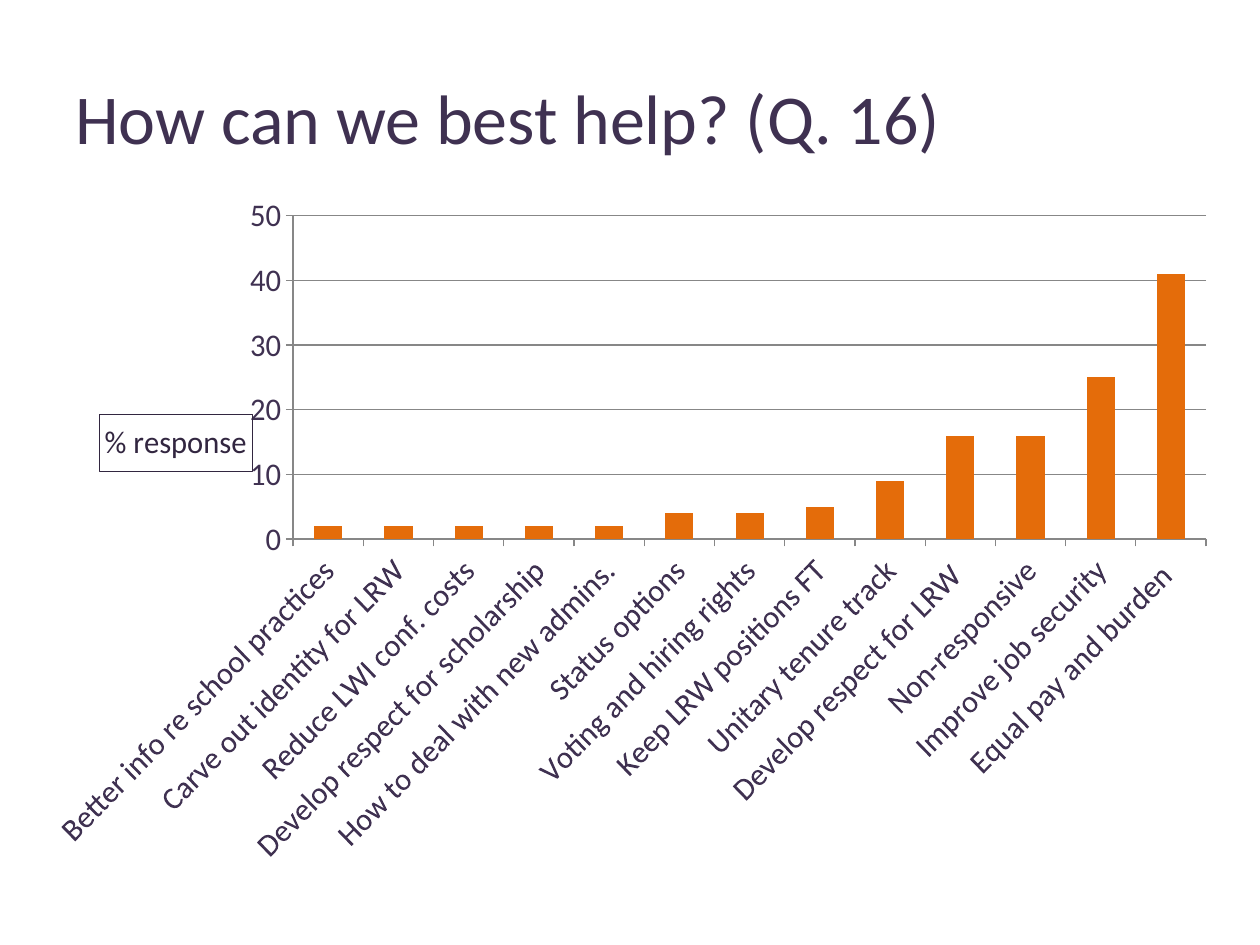
from lxml import etree
from pptx import Presentation, util as u
from pptx.chart.data import CategoryChartData
from pptx.dml.color import RGBColor
from pptx.enum import chart as ch, text as tx
from pptx.oxml.ns import qn

# Content
TITLE = "How can we best help? (Q. 16)"
AXIS = "% response"
NEEDS = [
    ("Better info re school practices", 2),
    ("Carve out identity for LRW", 2),
    ("Reduce LWI conf. costs", 2),
    ("Develop respect for scholarship", 2),
    ("How to deal with new admins.", 2),
    ("Status options", 4),
    ("Voting and hiring rights", 4),
    ("Keep LRW positions FT", 5),
    ("Unitary tenure track", 9),
    ("Develop respect for LRW ", 16),
    ("Non-responsive", 16),
    ("Improve job security", 25),
    ("Equal pay and burden ", 41),
]

# Format
INK = RGBColor(0x3F, 0x31, 0x51)
DARK = RGBColor(0x32, 0x26, 0x40)
BAR = RGBColor(0xE4, 0x6C, 0x0A)
RULE = RGBColor(0x87, 0x87, 0x87)
FACE = "Calibri"
PX = 914400 / 126
HEAD = (63, 38, 1134, 158)
CHART = (53, 179, 1176, 735)
PLOT = {"x": 0.18, "y": 0.05, "w": 0.8, "h": 0.44}
LABEL = {"x": 0.01, "y": 0.32}


def box(rect):
    return [round(v * PX) for v in rect]


def style(font, size, color):
    for key, val in {"name": FACE, "size": u.Pt(size), "bold": False}.items():
        setattr(font, key, val)
    font.color.rgb = color


def stroke(line, color):
    line.color.rgb = color
    line.width = u.Pt(0.75)


def place(host, spot, index, inner=False):
    """Give a chart part a fixed place, in fractions of the chart."""
    for old in host.findall(qn("c:layout")):
        host.remove(old)
    outer = etree.Element(qn("c:layout"))
    host.insert(index, outer)
    manual = etree.SubElement(outer, qn("c:manualLayout"))
    rows = [("layoutTarget", "inner")] if inner else []
    rows += [("xMode", "edge"), ("yMode", "edge"), *spot.items()]
    for tag, val in rows:
        etree.SubElement(manual, qn("c:" + tag)).set("val", str(val))


deck = Presentation()
deck.slide_width, deck.slide_height = u.Inches(10), u.Inches(7.5)
slide = deck.slides.add_slide(deck.slide_layouts[6])

# Heading
frame = slide.shapes.add_textbox(*box(HEAD)).text_frame
frame.word_wrap = True
frame.vertical_anchor = tx.MSO_ANCHOR.MIDDLE
frame.text = TITLE
style(frame.paragraphs[0].runs[0].font, 40, INK)

# Column chart
data = CategoryChartData()
data.categories = [name for name, _ in NEEDS]
data.add_series("Series 1", [val for _, val in NEEDS])
chart = slide.shapes.add_chart(
    ch.XL_CHART_TYPE.COLUMN_CLUSTERED, *box(CHART), data).chart
chart.has_legend = chart.has_title = False
style(chart.font, 10, INK)
plot = chart.plots[0]
plot.gap_width = 150
plot.vary_by_categories = False
fill = plot.series[0].format.fill
fill.solid()
fill.fore_color.rgb = BAR
place(chart._chartSpace.chart.plotArea, PLOT, 0, inner=True)

# Axes
cats, vals = chart.category_axis, chart.value_axis
for axis in (cats, vals):
    axis.major_tick_mark = ch.XL_TICK_MARK.OUTSIDE
    axis.minor_tick_mark = ch.XL_TICK_MARK.NONE
    style(axis.tick_labels.font, 18, INK)
    stroke(axis.format.line, RULE)
for key, val in {"minimum_scale": 0, "maximum_scale": 50, "major_unit": 10,
                 "has_major_gridlines": True}.items():
    setattr(vals, key, val)
stroke(vals.major_gridlines.format.line, RULE)
cats._element.find(qn("c:txPr")).find(qn("a:bodyPr")).set("rot", "-2700000")

# Boxed axis title, set level and clear of the value labels
label = vals.axis_title
label.text_frame.text = AXIS
style(label.text_frame.paragraphs[0].runs[0].font, 18, DARK)
turn = label.text_frame._txBody.find(qn("a:bodyPr"))
turn.set("rot", "0")
turn.set("vert", "horz")
stroke(label.format.line, DARK)
place(label._element, LABEL, 1)

deck.save("out.pptx")
